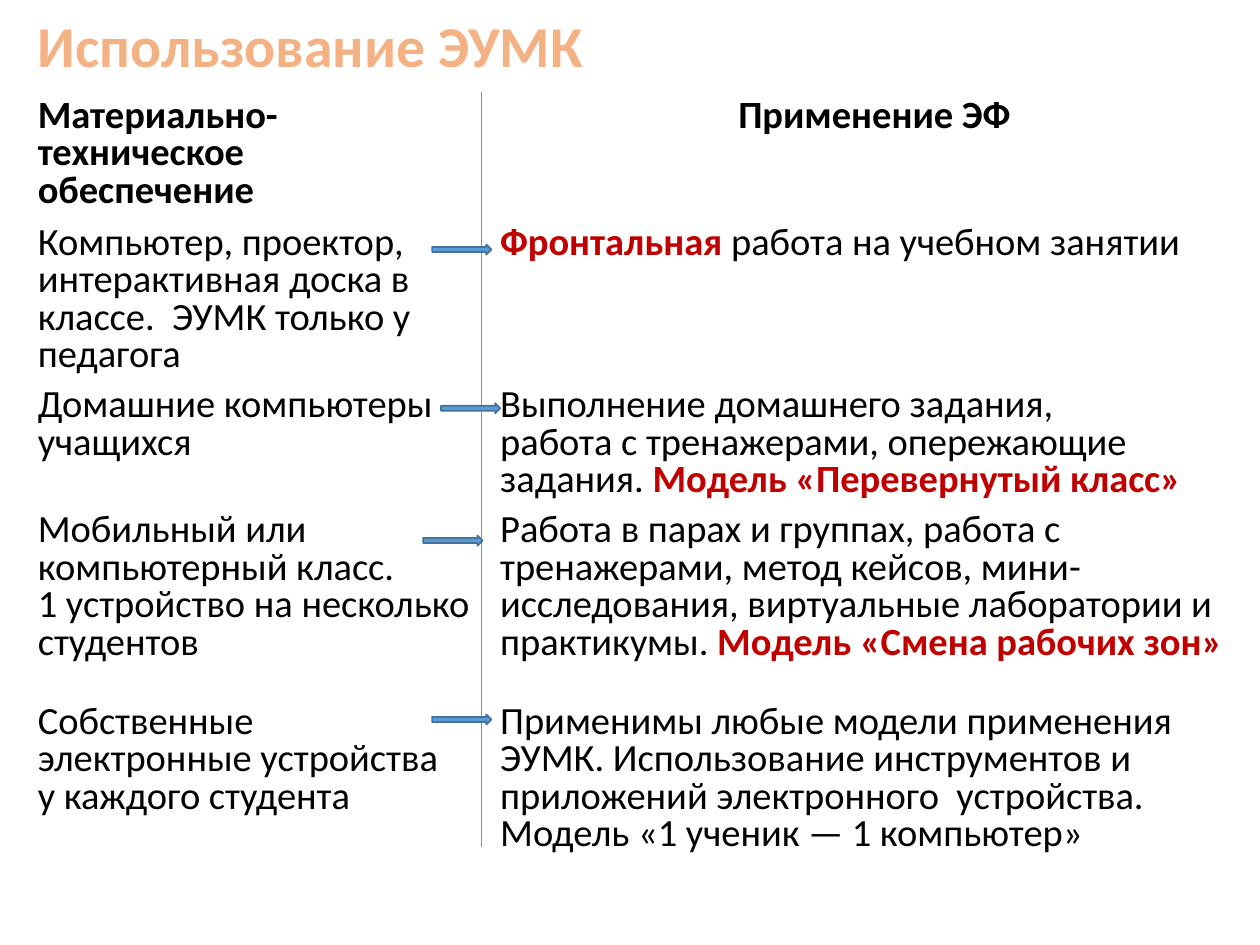
import pptx
import pptx.dml.color
import pptx.enum.shapes
import pptx.enum.text
import pptx.oxml
import pptx.oxml.ns
import pptx.util

Inches = pptx.util.Inches
ALIGN = pptx.enum.text.PP_ALIGN
WHITE, BLACK, RED, PEACH = "FFFFFF", "000000", "C00000", "F4B183"
BLUE, DARK_BLUE = "5B9BD5", "43739E"
COLUMNS = [3.67, 6.14]
ROWS = [1.01, 1.27, 0.97, 1.52, 1.78]
HEADINGS = [["Материально-техническое", "обеспечение"], ["Применение ЭФ"]]
USES = [
    (["Компьютер, проектор,", "интерактивная доска в классе.  ЭУМК только у педагога"],
     [[("Фронтальная", RED), " работа на учебном занятии"]]),
    (["Домашние компьютеры", "учащихся"],
     ["Выполнение домашнего задания,",
      ["работа с тренажерами, опережающие задания. ", ("Модель «Перевернутый класс»", RED)]]),
    (["Мобильный или", "компьютерный класс.", "1 устройство на несколько студентов"],
     [["Работа в парах и группах, работа с тренажерами, метод кейсов, мини-исследования, "
       "виртуальные лаборатории и практикумы. ", ("Модель «Смена рабочих зон»", RED)]]),
    (["Собственные", "электронные устройства", "у каждого студента"],
     ["Применимы любые модели применения ЭУМК. Использование инструментов и приложений "
      "электронного  устройства.", "Модель «1 ученик — 1 компьютер»"]),
]
ARROWS = [(3.43, 1.94), (3.5, 3.2), (3.36, 4.25), (3.43, 5.67)]


def color(value):
    """Return the colour of a hex string."""
    return pptx.dml.color.RGBColor.from_string(value)


def write(frame, paragraphs, size=22, bold=False, fill=BLACK, align=ALIGN.LEFT, spacing=0.8):
    """Write paragraphs of plain runs and (text, colour) bold accents."""
    for index, runs in enumerate(paragraphs):
        paragraph = frame.paragraphs[0] if index == 0 else frame.add_paragraph()
        paragraph.alignment = align
        paragraph.line_spacing = spacing
        paragraph.space_before = paragraph.space_after = pptx.util.Pt(0)
        for item in [runs] if isinstance(runs, str) else runs:
            accent = isinstance(item, tuple)
            run = paragraph.add_run()
            run.text = item[0] if accent else item
            run.font.name = "Calibri"
            run.font.size = pptx.util.Pt(size)
            run.font.bold = accent or bold
            run.font.color.rgb = color(item[1] if accent else fill)


def set_borders(cell, bottom_width):
    """Draw white borders around a cell."""
    properties = cell._tc.get_or_add_tcPr()
    widths = {"lnL": 1, "lnR": 1, "lnT": 1, "lnB": bottom_width}
    for index, (side, width) in enumerate(widths.items()):
        properties.insert(index, pptx.oxml.parse_xml(
            f'<a:{side} {pptx.oxml.ns.nsdecls("a")} w="{pptx.util.Pt(width)}"><a:solidFill>'
            f'<a:srgbClr val="{WHITE}"/></a:solidFill></a:{side}>'))


def add_title(slide, left, top, width, height):
    """Fill the title placeholder in the given box."""
    title = slide.shapes.title
    title.left, title.top, title.width, title.height = map(Inches, (left, top, width, height))
    title.fill.solid()
    title.fill.fore_color.rgb = color(WHITE)
    frame = title.text_frame
    frame.word_wrap = True
    frame.auto_size = pptx.enum.text.MSO_AUTO_SIZE.NONE
    frame.vertical_anchor = pptx.enum.text.MSO_ANCHOR.MIDDLE
    write(frame, ["Использование ЭУМК"], size=33, bold=True, fill=PEACH, spacing=0.9)


def add_uses_table(slide, left, top):
    """Add the table of equipment and its uses."""
    table = slide.shapes.add_table(len(ROWS), len(COLUMNS), Inches(left), Inches(top),
                                   Inches(sum(COLUMNS)), Inches(sum(ROWS))).table
    for column, width in zip(table.columns, COLUMNS):
        column.width = Inches(width)
    for row_index, texts in enumerate([HEADINGS, *USES]):
        table.rows[row_index].height = Inches(ROWS[row_index])
        heading = row_index == 0
        for column_index, paragraphs in enumerate(texts):
            cell = table.cell(row_index, column_index)
            cell.fill.solid()
            cell.fill.fore_color.rgb = color(WHITE)
            set_borders(cell, 3 if heading else 1)
            centred = heading and column_index == 1
            write(cell.text_frame, paragraphs, bold=heading,
                  align=ALIGN.CENTER if centred else ALIGN.LEFT)


def add_divider(slide, x, top, bottom):
    """Add the vertical line between the columns."""
    line = slide.shapes.add_connector(pptx.enum.shapes.MSO_CONNECTOR.STRAIGHT,
                                      *map(Inches, (x, top, x, bottom)))
    line.line.color.rgb = color(BLUE)
    line.line.width = pptx.util.Pt(0.5)
    line._element.spPr.append(pptx.oxml.parse_xml(
        f'<a:effectLst {pptx.oxml.ns.nsdecls("a")}/>'))


def add_arrow(slide, left, top, width=0.47, height=0.08):
    """Add an arrow from equipment to its use."""
    arrow = slide.shapes.add_shape(pptx.enum.shapes.MSO_SHAPE.RIGHT_ARROW,
                                   *map(Inches, (left, top, width, height)))
    arrow.shadow.inherit = False
    arrow.fill.solid()
    arrow.fill.fore_color.rgb = color(BLUE)
    arrow.line.color.rgb = color(DARK_BLUE)
    arrow.line.width = pptx.util.Pt(1)


def main():
    """Build and save the presentation."""
    presentation = pptx.Presentation()
    presentation.slide_width, presentation.slide_height = Inches(10), Inches(7.5)
    slide = presentation.slides.add_slide(presentation.slide_layouts[5])
    add_title(slide, 0.2, 0.07, 9.16, 0.64)
    add_uses_table(slide, 0.2, 0.73)
    add_divider(slide, 3.82, 0.73, 6.72)
    for left, top in ARROWS:
        add_arrow(slide, left, top)
    presentation.save("out.pptx")


if __name__ == "__main__":
    main()
